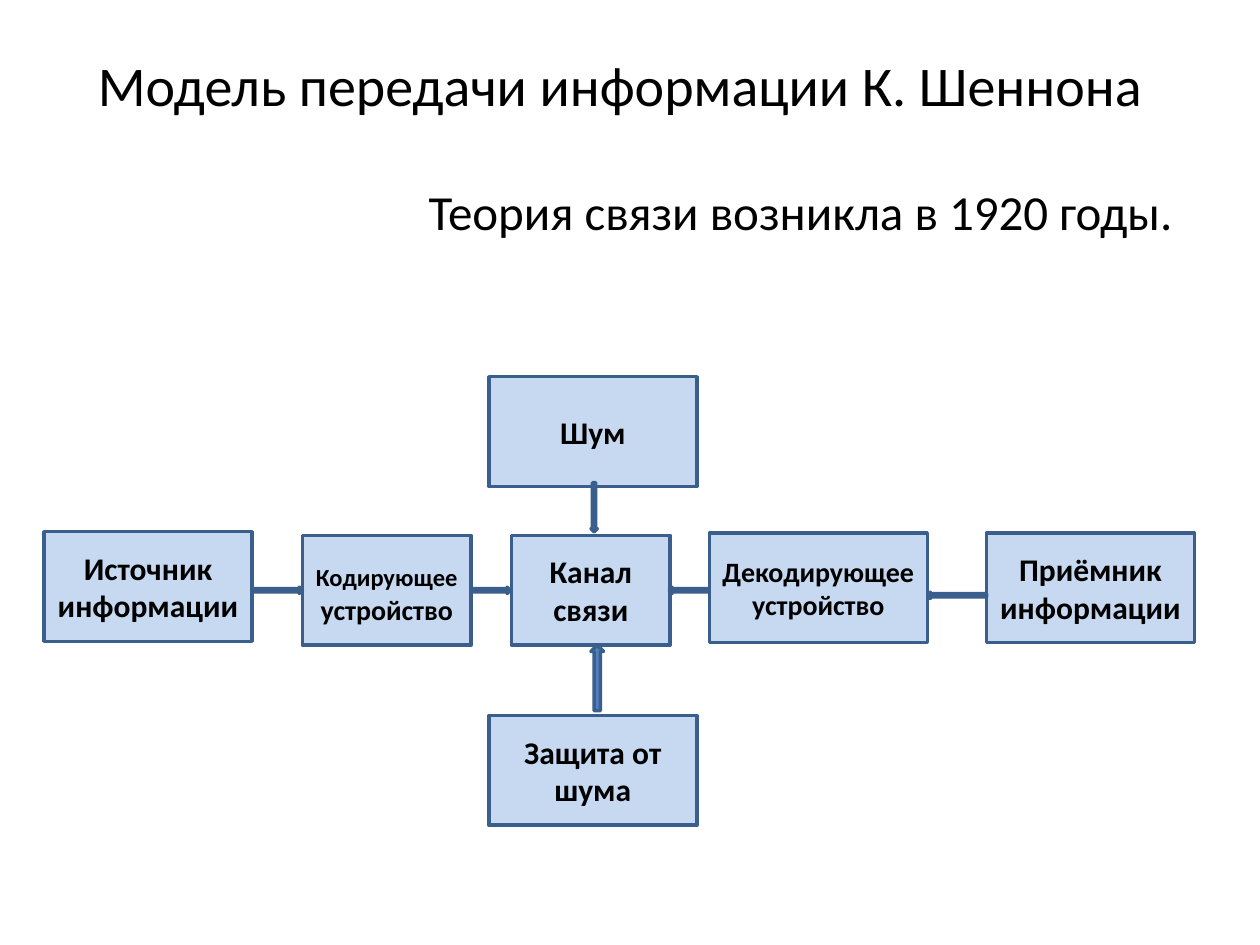
from dataclasses import dataclass

from pptx import Presentation
from pptx.dml.color import RGBColor
from pptx.enum.shapes import MSO_SHAPE
from pptx.enum.text import MSO_ANCHOR, MSO_AUTO_SIZE, PP_ALIGN
from pptx.util import Inches, Pt


@dataclass(frozen=True)
class Theme:
    font: str = "Calibri"
    text: str = "000000"
    box_fill: str = "C6D9F1"
    arrow_fill: str = "4F81BD"
    outline: str = "3A5F8C"
    outline_width: float = 2
    title_size: int = 32
    subtitle_size: int = 28
    box_size: int = 18
    medium_size: int = 16
    small_size: int = 14


THEME = Theme()


def write_text(shape, text, size, bold=False, align=PP_ALIGN.CENTER, anchor=MSO_ANCHOR.TOP):
    runs = [(text, size)] if isinstance(text, str) else text
    frame = shape.text_frame
    frame.word_wrap = True
    frame.auto_size = MSO_AUTO_SIZE.NONE
    frame.vertical_anchor = anchor
    paragraph = frame.paragraphs[0]
    paragraph.alignment = align
    for run_text, run_size in runs:
        run = paragraph.add_run()
        run.text = run_text
        run.font.name = THEME.font
        run.font.size = Pt(run_size)
        run.font.bold = bold
        run.font.color.rgb = RGBColor.from_string(THEME.text)


class SlideBuilder:
    def __init__(self, slide, theme):
        self.slide = slide
        self.theme = theme

    def title(self, text, left, top, width, height):
        shape = self.slide.shapes.title
        shape.left, shape.top = Inches(left), Inches(top)
        shape.width, shape.height = Inches(width), Inches(height)
        write_text(shape, text, self.theme.title_size)

    def subtitle(self, text, left, top, width, height):
        shape = self.slide.shapes.add_textbox(
            Inches(left), Inches(top), Inches(width), Inches(height)
        )
        write_text(shape, text, self.theme.subtitle_size, align=PP_ALIGN.RIGHT)

    def outlined(self, kind, fill, left, top, width, height):
        shape = self.slide.shapes.add_shape(
            kind, Inches(left), Inches(top), Inches(width), Inches(height)
        )
        shape.shadow.inherit = False
        shape.fill.solid()
        shape.fill.fore_color.rgb = RGBColor.from_string(fill)
        shape.line.color.rgb = RGBColor.from_string(self.theme.outline)
        shape.line.width = Pt(self.theme.outline_width)
        return shape

    def box(self, text, left, top, width=1.65, height=0.87, size=THEME.box_size):
        shape = self.outlined(
            MSO_SHAPE.FLOWCHART_PROCESS, self.theme.box_fill, left, top, width, height
        )
        write_text(shape, text, size, bold=True, anchor=MSO_ANCHOR.MIDDLE)

    def arrow(self, kind, left, top, width=0.05, height=0.05):
        self.outlined(kind, self.theme.arrow_fill, left, top, width, height)


def main():
    presentation = Presentation()
    presentation.slide_width = Inches(10)
    presentation.slide_height = Inches(7.5)
    slide = presentation.slides.add_slide(presentation.slide_layouts[5])
    builder = SlideBuilder(slide, THEME)

    builder.title("Модель передачи информации К. Шеннона", 0.36, 0.35, 9.13, 0.64)
    builder.subtitle("Теория связи возникла в 1920 годы. ", 2.59, 1.39, 6.9, 0.57)

    encoder = [
        ("Кодирующее", THEME.small_size),
        (" ", THEME.box_size),
        ("устройство", THEME.medium_size),
    ]
    builder.box("Источник информации", 0.35, 4.22)
    builder.box(encoder, 2.4, 4.25, width=1.34)
    builder.box("Канал связи", 4.06, 4.25, width=1.26)
    builder.box("Декодирующее устройство", 5.63, 4.23, width=1.73, size=THEME.medium_size)
    builder.box("Приёмник информации", 7.83, 4.23)
    builder.box("Шум", 3.88, 2.99)
    builder.box("Защита от шума", 3.88, 5.68)

    builder.arrow(MSO_SHAPE.RIGHT_ARROW, 2.01, 4.66, width=0.39)
    builder.arrow(MSO_SHAPE.RIGHT_ARROW, 3.74, 4.66, width=0.31)
    builder.arrow(MSO_SHAPE.LEFT_ARROW, 5.31, 4.66, width=0.31)
    builder.arrow(MSO_SHAPE.LEFT_ARROW, 7.36, 4.7, width=0.47)
    builder.arrow(MSO_SHAPE.UP_ARROW, 4.69, 5.12, width=0.1, height=0.52)
    builder.arrow(MSO_SHAPE.DOWN_ARROW, 4.69, 3.83, height=0.39)

    presentation.save("out.pptx")


if __name__ == "__main__":
    main()
